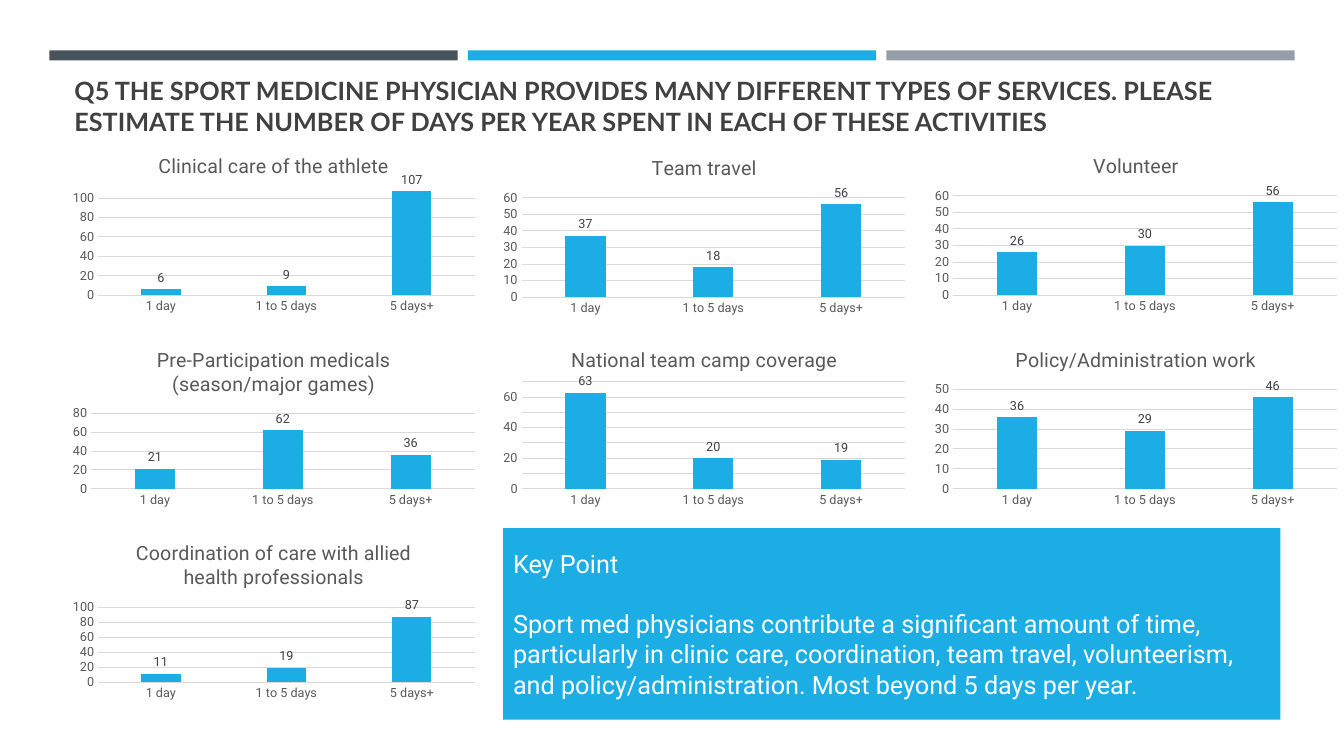
from dataclasses import dataclass
from typing import Optional

from pptx import Presentation
from pptx.chart.data import CategoryChartData
from pptx.dml.color import RGBColor
from pptx.enum import chart as chart_enum, shapes, text
from pptx.util import Inches, Pt

COLORS = {
    "slate": "465359",
    "blue": "1CADE4",
    "silver": "969FA7",
    "heading": "404040",
    "label": "595959",
    "grid": "D9D9D9",
    "white": "FFFFFF",
    "black": "000000",
}
HEADING_FONT, BODY_FONT = "Lato", "Roboto"
DAYS = ("1 day", "1 to 5 days", "5 days+")
COLUMNS = (0.64, 4.91, 9.19)
ROWS = (1.39, 3.31, 5.23)
CHART_WIDTH, CHART_HEIGHT = 4.15, 1.76
BAND_LEFT, BAND_WIDTH, BAND_STEP = 0.49, 4.05, 4.15


@dataclass
class Activity:
    title: str
    column: int
    row: int
    counts: tuple[int, int, int]
    maximum: Optional[int] = None
    drop: float = 0


ACTIVITIES = (
    Activity("Clinical care of the athlete", 0, 0, (6, 9, 107), maximum=110),
    Activity("Team travel", 1, 0, (37, 18, 56), drop=0.02),
    Activity("Volunteer", 2, 0, (26, 30, 56)),
    Activity("Pre-Participation medicals (season/major games)", 0, 1, (21, 62, 36)),
    Activity("National team camp coverage", 1, 1, (63, 20, 19)),
    Activity("Policy/Administration work", 2, 1, (36, 29, 46)),
    Activity("Coordination of care with allied health professionals", 0, 2, (11, 19, 87)),
)


def rgb(name: str) -> RGBColor:
    return RGBColor.from_string(COLORS[name])


def style_font(font, size: float, color: str, name: str = BODY_FONT, bold: bool = False) -> None:
    font.size = Pt(size)
    font.name = name
    font.bold = bold
    font.color.rgb = rgb(color)


def style_line(line, color: str) -> None:
    line.color.rgb = rgb(color)
    line.width = Pt(0.75)


def add_block(page, left: float, top: float, width: float, height: float, color: str):
    """Draw a flat rectangle without outline."""
    block = page.shapes.add_shape(
        shapes.MSO_SHAPE.RECTANGLE, Inches(left), Inches(top), Inches(width), Inches(height)
    )
    block.shadow.inherit = False
    block.fill.solid()
    block.fill.fore_color.rgb = rgb(color)
    block.line.fill.background()
    return block


def add_heading(page) -> None:
    box = page.shapes.add_textbox(Inches(0.64), Inches(0.77), Inches(12.06), Inches(0.63))
    frame = box.text_frame
    frame.word_wrap = True
    frame.vertical_anchor = text.MSO_ANCHOR.BOTTOM
    frame.text = (
        "Q5 THE SPORT MEDICINE PHYSICIAN PROVIDES MANY DIFFERENT TYPES OF SERVICES. PLEASE "
        "ESTIMATE THE NUMBER OF DAYS PER YEAR SPENT IN EACH OF THESE ACTIVITIES"
    )
    style_font(frame.paragraphs[0].runs[0].font, 18, "heading", HEADING_FONT, bold=True)


def add_key_point(page) -> None:
    frame = add_block(page, 4.99, 5.24, 7.71, 1.9, "blue").text_frame
    frame.word_wrap = True
    frame.vertical_anchor = text.MSO_ANCHOR.MIDDLE
    frame.text = (
        "Key Point\n"
        "Sport med physicians contribute a significant amount of time, particularly in clinic "
        "care, coordination, team travel, volunteerism, and policy/administration. "
        "Most beyond 5 days per year."
    )
    for para in frame.paragraphs:
        para.alignment = text.PP_ALIGN.LEFT
        style_font(para.runs[0].font, 18, "white")
    frame.paragraphs[0].space_after = Pt(21)


def style_axes(chart, maximum: Optional[int]) -> None:
    for axis in (chart.category_axis, chart.value_axis):
        axis.major_tick_mark = chart_enum.XL_TICK_MARK.NONE
        axis.minor_tick_mark = chart_enum.XL_TICK_MARK.NONE
        style_font(axis.tick_labels.font, 9, "label")
    chart.category_axis.has_major_gridlines = False
    style_line(chart.category_axis.format.line, "grid")
    values = chart.value_axis
    values.format.line.fill.background()
    values.has_major_gridlines = True
    style_line(values.major_gridlines.format.line, "grid")
    if maximum is not None:
        values.minimum_scale = 0
        values.maximum_scale = maximum


def add_activity_chart(page, activity: Activity) -> None:
    data = CategoryChartData()
    data.categories = DAYS
    data.add_series(activity.title, activity.counts)
    chart = page.shapes.add_chart(
        chart_enum.XL_CHART_TYPE.COLUMN_CLUSTERED,
        Inches(COLUMNS[activity.column]),
        Inches(ROWS[activity.row] + activity.drop),
        Inches(CHART_WIDTH),
        Inches(CHART_HEIGHT),
        data,
    ).chart
    style_font(chart.font, 10, "black")
    chart.has_legend = False
    chart.has_title = True
    chart.chart_title.include_in_layout = False
    title = chart.chart_title.text_frame
    title.text = activity.title
    style_font(title.paragraphs[0].runs[0].font, 14, "label")
    style_axes(chart, activity.maximum)

    plot = chart.plots[0]
    plot.gap_width = 219
    plot.overlap = -27
    plot.vary_by_categories = False
    series = plot.series[0]
    series.format.fill.solid()
    series.format.fill.fore_color.rgb = rgb("blue")
    labels = series.data_labels
    labels.show_value = True
    labels.position = chart_enum.XL_LABEL_POSITION.OUTSIDE_END
    style_font(labels.font, 9, "heading")


def main() -> None:
    deck = Presentation()
    deck.slide_width, deck.slide_height = Inches(13.33), Inches(7.5)
    page = deck.slides.add_slide(deck.slide_layouts[6])
    for index, color in enumerate(("slate", "blue", "silver")):
        add_block(page, BAND_LEFT + index * BAND_STEP, 0.5, BAND_WIDTH, 0.1, color)
    add_heading(page)
    add_key_point(page)
    for activity in ACTIVITIES:
        add_activity_chart(page, activity)
    deck.save("out.pptx")


if __name__ == "__main__":
    main()
